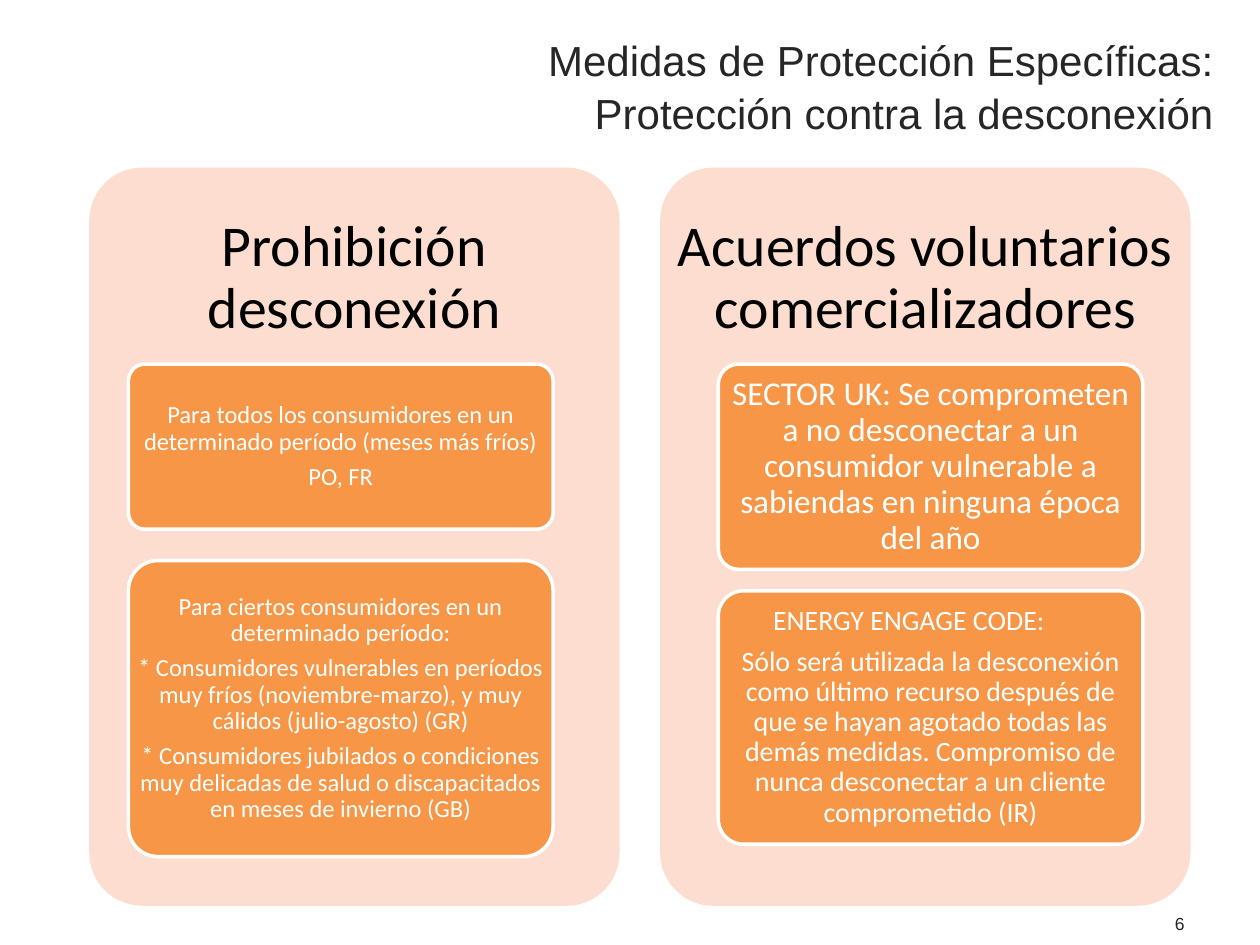
"""Build the slide on protection measures against disconnection."""
from dataclasses import dataclass

from pptx import Presentation
from pptx.dml.color import RGBColor
from pptx.enum.shapes import MSO_SHAPE
from pptx.enum.text import MSO_ANCHOR, PP_ALIGN
from pptx.shapes.autoshape import Shape
from pptx.slide import Slide
from pptx.util import Cm, Pt

COLOURS = {"ink": "262626", "heading": "000000", "panel": "FCDDCF", "card": "F79646", "white": "FFFFFF"}
PANEL_TOP, PANEL_WIDTH, PANEL_HEIGHT = 3.38, 10.69, 14.88
HEADING_HEIGHT = 4.47
CARD_WIDTH = 8.56


@dataclass
class Card:
    top: float
    height: float
    size: int
    paragraphs: list[str]
    inset: float = 0.08


@dataclass
class Panel:
    left: float
    card_left: float
    heading: str
    cards: list[Card]


PANELS = [
    Panel(1.8, 2.59, "Prohibición desconexión", [
        Card(7.34, 3.33, 14, [
            "Para todos los consumidores en un determinado período (meses más fríos)",
            "PO, FR",
        ]),
        Card(11.3, 5.97, 14, [
            "Para ciertos consumidores en un determinado período:",
            "* Consumidores vulnerables en períodos muy fríos (noviembre-marzo), "
            "y muy cálidos (julio-agosto) (GR)",
            "* Consumidores jubilados o condiciones muy delicadas de salud "
            "o discapacitados en meses de invierno (GB)",
        ], inset=0),
    ]),
    Panel(13.31, 14.48, "Acuerdos voluntarios comercializadores", [
        Card(7.34, 4.14, 19, [
            "SECTOR UK: Se comprometen a no desconectar a un consumidor vulnerable "
            "a sabiendas en ninguna época del año",
        ]),
        Card(11.91, 5.11, 16, [
            "ENERGY ENGAGE CODE:\t",
            "Sólo será utilizada la desconexión como último recurso después de que se "
            "hayan agotado todas las demás medidas. Compromiso de nunca desconectar "
            "a un cliente comprometido (IR)",
        ]),
    ]),
]


def write_text(shape: Shape, paragraphs: list[str], *, size: int, colour: str,
               font: str = "Calibri", align: PP_ALIGN = PP_ALIGN.CENTER,
               anchor: MSO_ANCHOR = MSO_ANCHOR.MIDDLE, spacing: float = 0.9,
               gap: float = 0.35, inset: tuple[float, float] = (0.25, 0.13)) -> None:
    """Fill a shape with uniformly formatted paragraphs."""
    frame = shape.text_frame
    frame.word_wrap = True
    frame.vertical_anchor = anchor
    frame.margin_left = frame.margin_right = Cm(inset[0])
    frame.margin_top = frame.margin_bottom = Cm(inset[1])
    for index, text in enumerate(paragraphs):
        paragraph = frame.paragraphs[0] if index == 0 else frame.add_paragraph()
        paragraph.text = text
        paragraph.alignment = align
        paragraph.line_spacing = spacing
        paragraph.space_after = Pt(size * gap)
        for run in paragraph.runs:
            run.font.size = Pt(size)
            run.font.name = font
            run.font.color.rgb = RGBColor.from_string(COLOURS[colour])


def add_text_box(slide: Slide, left: float, top: float, width: float, height: float) -> Shape:
    """Add an empty text box measured in centimetres."""
    return slide.shapes.add_textbox(Cm(left), Cm(top), Cm(width), Cm(height))


def add_rounded(slide: Slide, left: float, top: float, width: float, height: float,
                fill: str, outline: str | None = None) -> Shape:
    """Add a flat rounded rectangle measured in centimetres."""
    shape = slide.shapes.add_shape(
        MSO_SHAPE.ROUNDED_RECTANGLE, Cm(left), Cm(top), Cm(width), Cm(height))
    shape.adjustments[0] = 0.1
    shape.shadow.inherit = False
    shape.fill.solid()
    shape.fill.fore_color.rgb = RGBColor.from_string(COLOURS[fill])
    if outline:
        shape.line.color.rgb = RGBColor.from_string(COLOURS[outline])
        shape.line.width = Pt(2)
    else:
        shape.line.fill.background()
    return shape


def add_panel(slide: Slide, panel: Panel) -> None:
    """Draw one panel with its heading and cards."""
    add_rounded(slide, panel.left, PANEL_TOP, PANEL_WIDTH, PANEL_HEIGHT, "panel")
    heading = add_text_box(slide, panel.left, PANEL_TOP, PANEL_WIDTH, HEADING_HEIGHT)
    write_text(heading, [panel.heading], size=33, colour="heading", inset=(0.3, 0.3))
    for card in panel.cards:
        shape = add_rounded(slide, panel.card_left, card.top, CARD_WIDTH, card.height,
                            "card", "white")
        write_text(shape, card.paragraphs, size=card.size, colour="white",
                   inset=(card.inset, 0))


def main() -> None:
    """Create and save the presentation."""
    presentation = Presentation()
    presentation.slide_width, presentation.slide_height = Cm(25.4), Cm(19.05)
    slide = presentation.slides.add_slide(presentation.slide_layouts[6])
    write_text(add_text_box(slide, 18.21, 18.11, 5.92, 1.02), ["6"], size=10, colour="ink",
               font="Arial", align=PP_ALIGN.RIGHT, spacing=1.0, gap=0)
    write_text(add_text_box(slide, 8.1, 0.53, 16.61, 2.01),
               ["Medidas de Protección Específicas:\vProtección contra la desconexión"],
               size=24, colour="ink", font="Arial", align=PP_ALIGN.RIGHT,
               anchor=MSO_ANCHOR.TOP, spacing=1.04, gap=0)
    for panel in PANELS:
        add_panel(slide, panel)
    presentation.save("out.pptx")


if __name__ == "__main__":
    main()
